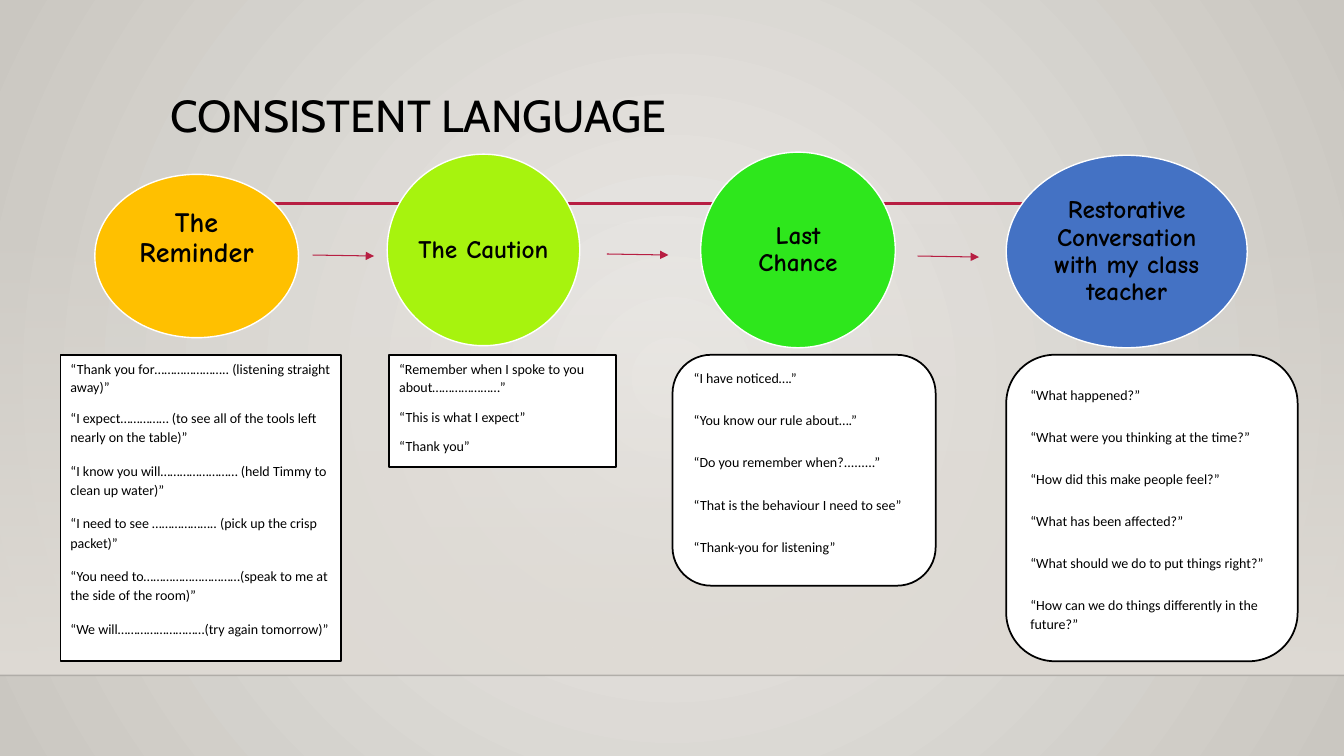
from lxml import etree
from pptx import Presentation, util as u
from pptx.dml.color import RGBColor
from pptx.enum import shapes, text
from pptx.oxml.ns import qn

BLACK = RGBColor(0, 0, 0)
WHITE = RGBColor(255, 255, 255)
CRIMSON = RGBColor(0xB7, 0x1E, 0x42)
AMBER = RGBColor(0xFF, 0xC0, 0x00)
LIME = RGBColor(0xA7, 0xF3, 0x0E)
GREEN = RGBColor(0x2E, 0xE7, 0x1C)
BLUE = RGBColor(0x44, 0x72, 0xC4)
PALE = RGBColor(0xEC, 0xEA, 0xE7)
STONE = RGBColor(0xCA, 0xC7, 0xC1)
FLOOR = RGBColor(0xDF, 0xDB, 0xD5)

RECT = shapes.MSO_SHAPE.RECTANGLE
ROUND = shapes.MSO_SHAPE.ROUNDED_RECTANGLE
TOP = text.MSO_ANCHOR.TOP
MIDDLE = text.MSO_ANCHOR.MIDDLE
NOTE_TOP = 3.52


def set_alpha(color_element, percent):
    etree.SubElement(color_element, qn("a:alpha")).set("val", str(percent * 1000))


class Deck:
    title_font, label_font, note_font = "Cabin", "Comic Neue", "Calibri"

    def __init__(self):
        self.prs = Presentation()
        self.prs.slide_width, self.prs.slide_height = u.Inches(13.33), u.Inches(7.5)
        self.s = self.prs.slides.add_slide(self.prs.slide_layouts[6])

    def gradient(self, fill, colors):
        fill.gradient()
        for stop, color in zip(fill.gradient_stops, colors):
            stop.color.rgb = color

    def background(self):
        self.gradient(self.s.background.fill, (PALE, STONE))
        lin = next(self.s._element.iter(qn("a:lin")))
        radial = etree.Element(qn("a:path"), {"path": "circle"})
        etree.SubElement(radial, qn("a:fillToRect"), {side: "50000" for side in "ltrb"})
        lin.getparent().replace(lin, radial)

    def floor(self):
        """Fade the wall into the floor, from clear to solid."""
        sp = self.shape(RECT, (0, 2.21, 13.33, 4.49))
        self.gradient(sp.fill, (FLOOR, FLOOR))
        sp.fill.gradient_angle = 270
        set_alpha(next(sp._element.iter(qn("a:srgbClr"))), 0)
        edge = self.line((0, 6.7), (13.33, 6.7), BLACK, 1)
        set_alpha(next(edge._element.iter(qn("a:srgbClr"))), 20)

    def shape(self, kind, at, fill=None, line=None, width=1.0):
        sp = self.s.shapes.add_shape(kind, *map(u.Inches, at))
        sp.shadow.inherit = False
        if fill is not None:
            sp.fill.solid()
            sp.fill.fore_color.rgb = fill
        if line is None:
            sp.line.fill.background()
        else:
            sp.line.color.rgb = line
            sp.line.width = u.Pt(width)
        return sp

    def line(self, start, end, color, width, arrow=False):
        c = self.s.shapes.add_connector(shapes.MSO_CONNECTOR.STRAIGHT,
                                        *map(u.Inches, (*start, *end)))
        c.line.color.rgb = color
        c.line.width = u.Pt(width)
        if arrow:
            etree.SubElement(c.line._get_or_add_ln(), qn("a:tailEnd"), type="triangle")
        etree.SubElement(c._element.spPr, qn("a:effectLst"))
        return c

    def frame(self, sp, anchor, insets=(0.1, 0.05, 0.1, 0.05)):
        tf = sp.text_frame
        tf.word_wrap = True
        tf.vertical_anchor = anchor
        (tf.margin_left, tf.margin_top,
         tf.margin_right, tf.margin_bottom) = map(u.Inches, insets)
        return tf

    def paragraph(self, p, words, font, size, spacing, align=text.PP_ALIGN.LEFT, bold=False):
        p.text = words
        p.alignment = align
        p.line_spacing = spacing
        p.font.name, p.font.size, p.font.bold = font, u.Pt(size), bold
        p.font.color.rgb = BLACK

    def title(self, words):
        box = self.s.shapes.add_textbox(*map(u.Inches, (1.59, 0.88, 10.5, 1.15)))
        self.paragraph(self.frame(box, TOP).paragraphs[0], words, self.title_font, 32, 0.9)

    def circle(self, at, fill, words, size=18, side=0.03, bottom=0.03):
        sp = self.shape(shapes.MSO_SHAPE.OVAL, at, fill, WHITE)
        tf = self.frame(sp, MIDDLE, (side, 0.03, side, bottom))
        self.paragraph(tf.paragraphs[0], words, self.label_font, size, 0.9,
                       text.PP_ALIGN.CENTER, True)

    def note(self, kind, at, quotes, first, rest, anchor=TOP, bottom=0.05):
        """Write quotes in a box; first and rest are (line spacing, points after)."""
        sp = self.shape(kind, at, WHITE, BLACK, 1.25)
        tf = self.frame(sp, anchor, (0.1, 0.05, 0.1, bottom))
        for i, quote in enumerate(quotes):
            p = tf.paragraphs[0] if i == 0 else tf.add_paragraph()
            spacing, after = rest if i else first
            self.paragraph(p, quote, self.note_font, 10, spacing)
            if i < len(quotes) - 1:
                p.space_after = u.Pt(after)


def main():
    deck = Deck()
    deck.background()
    deck.floor()
    deck.line((1.59, 2.02), (12.1, 2.02), CRIMSON, 2.5)
    deck.title("CONSISTENT LANGUAGE")

    deck.circle((0.94, 1.73, 2.02, 1.62), AMBER, "The Reminder", size=20, bottom=0.38)
    deck.circle((3.84, 1.53, 1.91, 1.9), LIME, "The Caution")
    deck.circle((6.95, 1.51, 1.93, 1.94), GREEN, "Last Chance", side=0.15)
    deck.circle((9.98, 1.54, 2.39, 1.91), BLUE, "Restorative Conversation with my class teacher")

    tight, loose, open_lines = (1.07, 8), (1.15, 10), (1.15, 16.25)
    deck.note(RECT, (0.6, NOTE_TOP, 2.78, 3.04), [
        "“Thank you for………………….. (listening straight away)”",
        "“I expect…………… (to see all of the tools left nearly on the table)”",
        "“I know you will…………………… (held Timmy to clean up water)”",
        "“I need to see ……………….. (pick up the crisp packet)”",
        "“You need to…………………………(speak to me at the side of the room)”",
        "“We will………………………(try again tomorrow)”",
    ], tight, loose)
    deck.note(RECT, (3.86, NOTE_TOP, 2.25, 1.11), [
        "“Remember when I spoke to you about…………………”",
        "“This is what I expect”",
        "“Thank you”",
    ], tight, tight)
    deck.note(ROUND, (6.67, NOTE_TOP, 2.61, 2.29), [
        "“I have noticed….”",
        "“You know our rule about….”",
        "“Do you remember when?.........”",
        "“That is the behaviour I need to see”",
        "“Thank-you for listening”",
    ], open_lines, open_lines, MIDDLE, bottom=0.23)
    deck.note(ROUND, (9.98, NOTE_TOP, 2.89, 3.04), [
        "“What happened?”",
        "“What were you thinking at the time?”",
        "“How did this make people feel?”",
        "“What has been affected?”",
        "“What should we do to put things right?”",
        "“How can we do things differently in the future?”",
    ], open_lines, open_lines, MIDDLE)

    for x, y in ((3.1, 2.53), (6.02, 2.52), (9.1, 2.54)):
        deck.line((x, y), (x + 0.61, y + 0.01), CRIMSON, 0.75, arrow=True)

    deck.prs.save("out.pptx")


if __name__ == "__main__":
    main()
